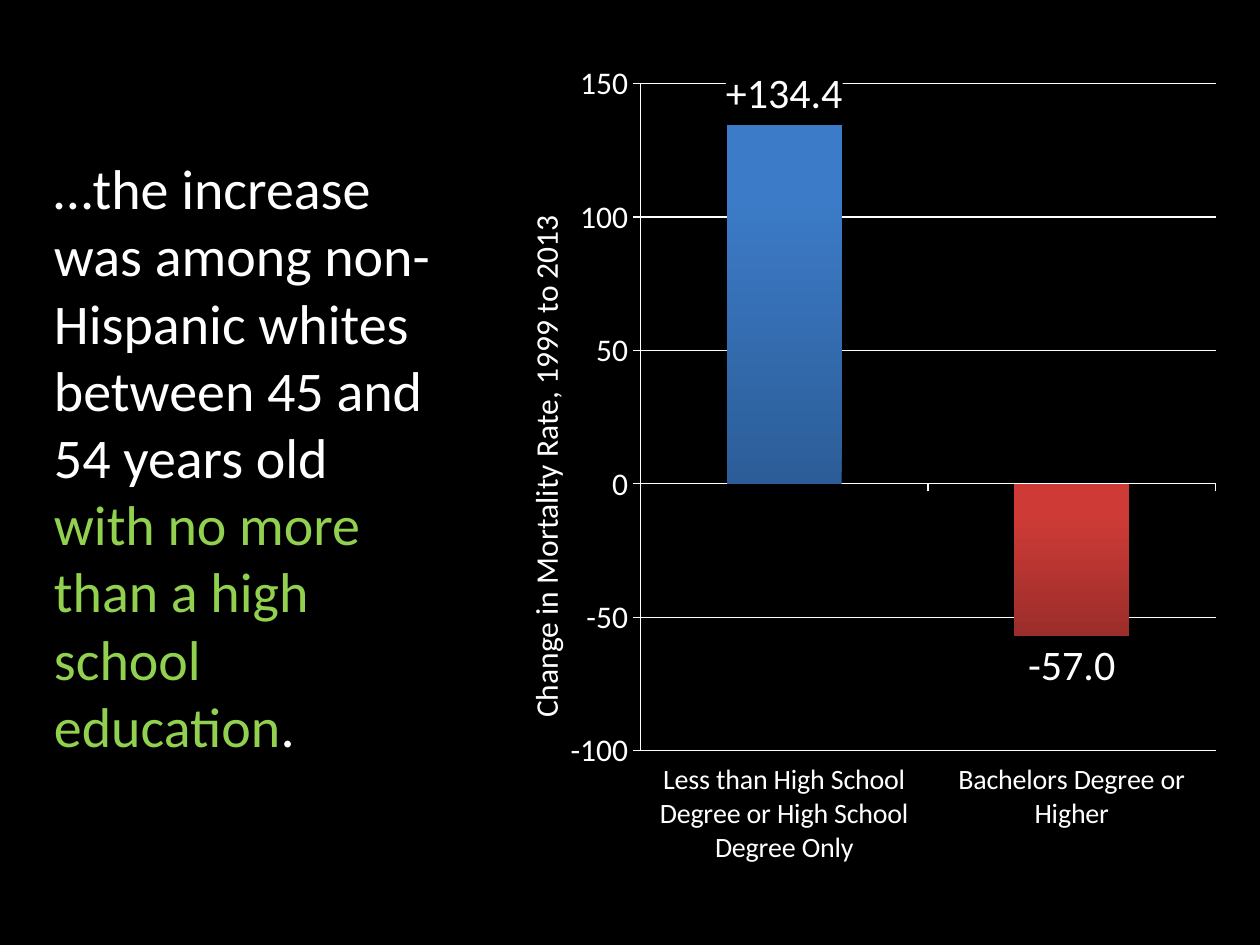
import pptx
import pptx.chart.data
import pptx.dml.color
import pptx.enum.chart
import pptx.util
from lxml import etree
from pptx.oxml import parse_xml
from pptx.oxml.ns import nsdecls, qn
from pptx.util import Inches

WHITE, BLACK, GREEN = "FFFFFF", "000000", "92D050"
# Bottom and top colour of each bar
BAR_GRADIENTS = [("2C5D98", "3C7BC7"), ("9B2D2A", "CE3B37")]


def color(hex_value):
    return pptx.dml.color.RGBColor.from_string(hex_value)


def set_layout(parent, position, **fractions):
    """Place a chart part by fractions of the chart size."""
    old = parent.find(qn("c:layout"))
    if old is not None:
        parent.remove(old)
    layout = parse_xml(f"<c:layout {nsdecls('c')}><c:manualLayout/></c:layout>")
    manual = layout[0]
    if "w" in fractions:
        etree.SubElement(manual, qn("c:layoutTarget")).set("val", "inner")
    for side in ("x", "y"):
        etree.SubElement(manual, qn(f"c:{side}Mode")).set("val", "edge")
    for name, value in fractions.items():
        etree.SubElement(manual, qn(f"c:{name}")).set("val", str(value))
    parent.insert(position, layout)


class SlideBuilder:
    font_name = "Calibri"

    def __init__(self, deck):
        self.slide = deck.slides.add_slide(deck.slide_layouts[6])
        fill = self.slide.background.fill
        fill.solid()
        fill.fore_color.rgb = color(BLACK)

    def style(self, font, size, hex_value=WHITE):
        font.name = self.font_name
        font.size = pptx.util.Pt(size)
        font.bold = False
        font.color.rgb = color(hex_value)

    def line(self, line_format):
        line_format.color.rgb = color(WHITE)
        line_format.width = pptx.util.Pt(0.75)

    def text(self, left, top, width, height, spans, size):
        box = self.slide.shapes.add_textbox(
            Inches(left), Inches(top), Inches(width), Inches(height))
        box.text_frame.word_wrap = True
        para = box.text_frame.paragraphs[0]
        for words, hex_value in spans:
            span = para.add_run()
            span.text = words
            self.style(span.font, size, hex_value)

    def column_chart(self, left, top, width, height, categories, values):
        data = pptx.chart.data.CategoryChartData()
        data.categories = categories
        data.add_series("Series 1", values)
        chart = self.slide.shapes.add_chart(
            pptx.enum.chart.XL_CHART_TYPE.COLUMN_CLUSTERED,
            Inches(left), Inches(top), Inches(width), Inches(height), data).chart
        chart.has_legend = False
        chart.has_title = False
        self.style(chart.font, 18)
        plot = chart.plots[0]
        plot.gap_width = 150
        plot.vary_by_categories = False
        set_layout(plot._element.getparent(), 0, x=0.191, y=0.05, w=0.805, h=0.794)
        return chart

    def bars(self, series, gradients):
        series.invert_if_negative = False
        for index, shades in enumerate(gradients):
            fill = series.points[index].format.fill
            fill.gradient()
            fill.gradient_angle = 90
            for stop, shade, position in zip(fill.gradient_stops, shades, (0, 0.8)):
                stop.color.rgb = color(shade)
                stop.position = position

    def value_labels(self, plot, number_format, size):
        plot.has_data_labels = True
        labels = plot.data_labels
        labels.show_value = True
        labels.number_format = number_format
        labels.number_format_is_linked = False
        labels.position = pptx.enum.chart.XL_LABEL_POSITION.OUTSIDE_END
        self.style(labels.font, size)
        # A black backing hides the gridline behind a label
        backing = parse_xml(
            f"<c:spPr {nsdecls('c', 'a')}><a:solidFill>"
            f'<a:srgbClr val="{BLACK}"/></a:solidFill></c:spPr>')
        labels._element.find(qn("c:txPr")).addprevious(backing)

    def axis(self, axis, size):
        axis.major_tick_mark = pptx.enum.chart.XL_TICK_MARK.OUTSIDE
        axis.minor_tick_mark = pptx.enum.chart.XL_TICK_MARK.NONE
        axis.tick_label_position = pptx.enum.chart.XL_TICK_LABEL_POSITION.LOW
        self.style(axis.tick_labels.font, size)
        self.line(axis.format.line)

    def axis_title(self, axis, words, size):
        frame = axis.axis_title.text_frame
        frame.text = words
        self.style(frame.paragraphs[0].runs[0].font, size)
        body = frame._txBody.find(qn("a:bodyPr"))
        body.set("rot", "-5400000")
        body.set("vert", "horz")
        set_layout(axis.axis_title._element, 1, x=0.02, y=0.2)


def main():
    deck = pptx.Presentation()
    deck.slide_width, deck.slide_height = Inches(10), Inches(7.5)
    builder = SlideBuilder(deck)

    # Statement
    builder.text(0.33, 1.17, 3.25, 4.95, [
        ("…the increase was among non-Hispanic whites between 45 and 54 years old ", WHITE),
        ("with no more than a high school education", GREEN),
        (".", WHITE),
    ], 32)

    # Mortality chart
    chart = builder.column_chart(
        4, 0.33, 5.67, 6.67,
        ["Less than High School Degree or High School Degree Only",
         "Bachelors Degree or Higher"],
        [134.4, -57])
    builder.bars(chart.plots[0].series[0], BAR_GRADIENTS)
    builder.value_labels(chart.plots[0], "+0.0;-0.0", 24)

    # Axes
    builder.axis(chart.category_axis, 16)
    rate_axis = chart.value_axis
    builder.axis(rate_axis, 18)
    rate_axis.minimum_scale, rate_axis.maximum_scale = -100, 150
    rate_axis.major_unit = 50
    rate_axis.has_major_gridlines = True
    builder.line(rate_axis.major_gridlines.format.line)
    builder.axis_title(rate_axis, "Change in Mortality Rate, 1999 to 2013", 18)

    deck.save("out.pptx")


if __name__ == "__main__":
    main()
